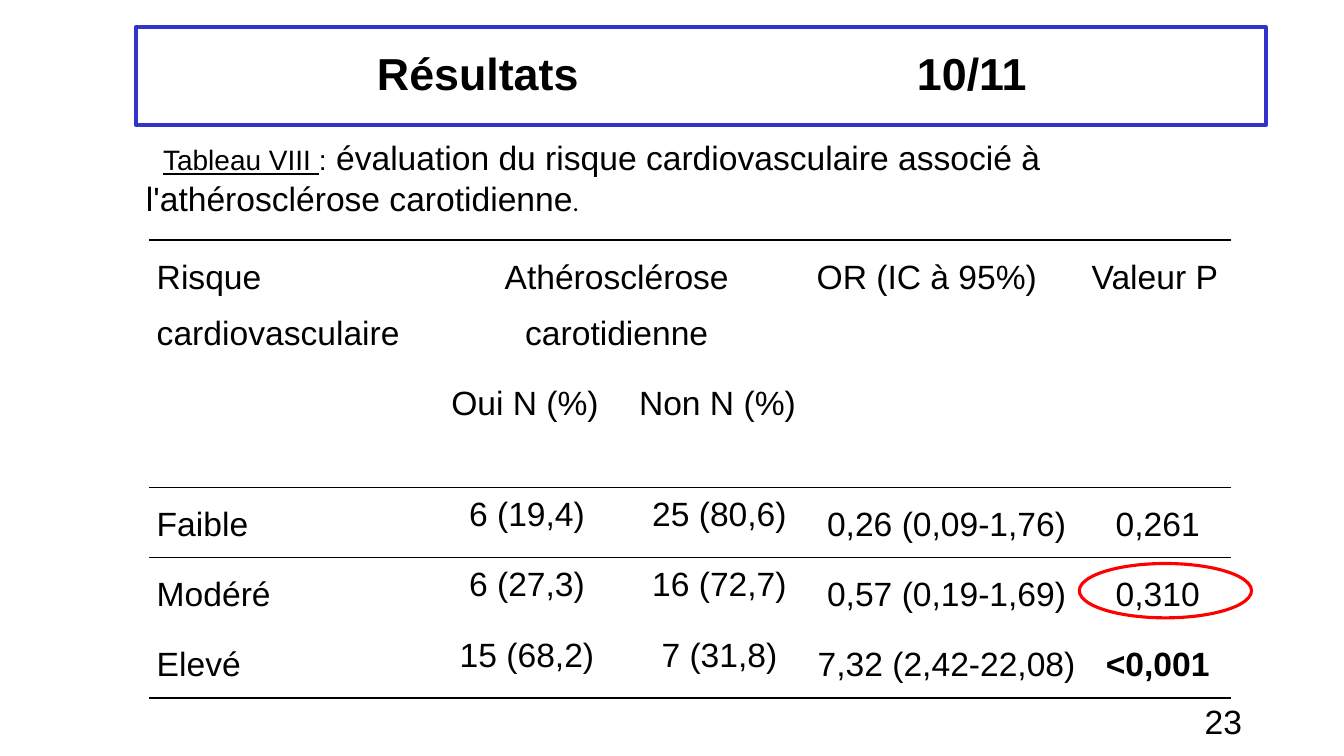
import dataclasses

import lxml.etree
import pptx
import pptx.dml.color
import pptx.enum.shapes
import pptx.enum.text
import pptx.oxml.ns
import pptx.util

Cm = pptx.util.Cm
Pt = pptx.util.Pt
ALIGN = pptx.enum.text.PP_ALIGN
ANCHOR = pptx.enum.text.MSO_ANCHOR
SHAPE = pptx.enum.shapes.MSO_SHAPE
qn = pptx.oxml.ns.qn


@dataclasses.dataclass(frozen=True)
class Theme:
    ink: str = "000000"
    frame: str = "3333CC"
    highlight: str = "FF0000"
    font: str = "Arial"
    stop_font: str = "Calibri"
    title: int = 32
    body: int = 24
    label: int = 20
    stop: int = 18


@dataclasses.dataclass(frozen=True)
class Box:
    left: float
    top: float
    width: float
    height: float

    def lengths(self):
        return [Cm(value) for value in dataclasses.astuple(self)]


THEME = Theme()
COLUMNS = [6.93, 5.08, 4.62, 6.93, 3.71]
ROWS = [3.18, 2.82, 1.77, 1.77, 1.77]
RULED_EDGES = {0, 2, 3, 5}
MERGES = [((0, 0), (1, 0)), ((0, 1), (0, 2)), ((0, 3), (1, 3)), ((0, 4), (1, 4))]
RISKS = [
    ["Risque cardiovasculaire", "Athérosclérose carotidienne", "", "OR (IC à 95%)", "Valeur P"],
    ["", "Oui N (%)", "Non N (%)", "", ""],
    ["Faible", "6 (19,4)", "25 (80,6)", "0,26 (0,09-1,76)", "0,261"],
    ["Modéré", "6 (27,3)", "16 (72,7)", "0,57 (0,19-1,69)", "0,310"],
    ["Elevé", "15 (68,2)", "7 (31,8)", "7,32 (2,42-22,08)", "<0,001"],
]


def apply(target, formats):
    for name, value in formats.items():
        setattr(target, name, value)


def add_span(para, text, **formats):
    span = para.add_run()
    span.text = text
    apply(span.font, {"name": THEME.font, "size": Pt(THEME.body), **formats})
    span.font.color.rgb = pptx.dml.color.RGBColor.from_string(THEME.ink)


def add_outline(page, kind, box, color, width):
    shape = page.shapes.add_shape(kind, *box.lengths())
    shape.shadow.inherit = False
    shape.fill.background()
    shape.line.color.rgb = pptx.dml.color.RGBColor.from_string(color)
    shape.line.width = Pt(width)
    return shape


def add_title(page, box):
    shape = add_outline(page, SHAPE.RECTANGLE, box, THEME.frame, 3)
    apply(shape.text_frame, {
        "word_wrap": True, "vertical_anchor": ANCHOR.MIDDLE, "margin_left": Cm(6.07),
    })
    para = shape.text_frame.paragraphs[0]
    apply(para, {"alignment": ALIGN.LEFT, "line_spacing": 0.9})
    stops = lxml.etree.SubElement(para._p.get_or_add_pPr(), qn("a:tabLst"))
    lxml.etree.SubElement(stops, qn("a:tab"), pos=str(Cm(13.61)), algn="l")
    add_span(para, "Résultats\t10/11", size=Pt(THEME.title), bold=True)


def add_caption(page, box):
    frame = page.shapes.add_textbox(*box.lengths()).text_frame
    frame.word_wrap = True
    para = frame.paragraphs[0]
    para._p.get_or_add_pPr().set("indent", str(Cm(0.43)))
    add_span(para, "Tableau VIII ", size=Pt(THEME.label), underline=True)
    add_span(para, ":", size=Pt(THEME.label))
    add_span(para, " évaluation du risque cardiovasculaire associé à l'athérosclérose carotidienne")
    add_span(para, ".", size=Pt(THEME.stop), name=THEME.stop_font)


def rule_cell(cell, edges):
    properties = cell._tc.get_or_add_tcPr()
    for position, side in enumerate(("L", "R", "T", "B")):
        line = lxml.etree.Element(qn(f"a:ln{side}"), w=str(Pt(1)))
        if edges.get(side) in RULED_EDGES:
            fill = lxml.etree.SubElement(line, qn("a:solidFill"))
            lxml.etree.SubElement(fill, qn("a:srgbClr"), val=THEME.ink)
        else:
            lxml.etree.SubElement(line, qn("a:noFill"))
        properties.insert(position, line)


def fill_cell(cell, row, column, text):
    is_count = row > 1 and column in (1, 2)
    is_justified = column == 0 or (row == 0 and column > 2)
    apply(cell, {
        "margin_left": Cm(0.19), "margin_right": Cm(0.19),
        "margin_top": 0, "margin_bottom": 0,
        "vertical_anchor": ANCHOR.MIDDLE if is_count else ANCHOR.TOP,
    })
    cell.fill.background()
    rule_cell(cell, {"T": row, "B": row + cell.span_height})
    if not text:
        return
    para = cell.text_frame.paragraphs[0]
    apply(para, {
        "alignment": ALIGN.JUSTIFY if is_justified else ALIGN.CENTER,
        "line_spacing": Pt(16) if is_count else 1.5,
    })
    if is_count:
        para._p.get_or_add_pPr().set("marL", str(Cm(0.1)))
    add_span(para, text, bold=text.startswith("<"))


def add_risk_table(page, box):
    table = page.shapes.add_table(len(ROWS), len(COLUMNS), *box.lengths()).table
    apply(table, {"first_row": False, "horz_banding": False})
    for column, width in zip(table.columns, COLUMNS):
        column.width = Cm(width)
    for row, height in zip(table.rows, ROWS):
        row.height = Cm(height)
    for first, last in MERGES:
        table.cell(*first).merge(table.cell(*last))
    for row, texts in enumerate(RISKS):
        for column, text in enumerate(texts):
            fill_cell(table.cell(row, column), row, column, text)
    ring = Box(box.left + 23.44, box.top + 8.15, 4.34, 1.37)
    add_outline(page, SHAPE.OVAL, ring, THEME.highlight, 2.25)


def add_page_number(page, box):
    frame = page.shapes.add_textbox(*box.lengths()).text_frame
    apply(frame, {"word_wrap": True, "vertical_anchor": ANCHOR.MIDDLE})
    para = frame.paragraphs[0]
    para.alignment = ALIGN.RIGHT
    add_span(para, "23")


def main():
    deck = pptx.Presentation()
    apply(deck, {"slide_width": Cm(33.87), "slide_height": Cm(19.05)})
    page = deck.slides.add_slide(deck.slide_layouts[6])
    add_title(page, Box(3.43, 0.69, 28.47, 2.46))
    add_caption(page, Box(3.43, 3.33, 29.01, 3.18))
    add_risk_table(page, Box(3.76, 6.05, sum(COLUMNS), sum(ROWS)))
    add_page_number(page, Box(23.93, 17.65, 7.62, 1.02))
    deck.save("out.pptx")


if __name__ == "__main__":
    main()
